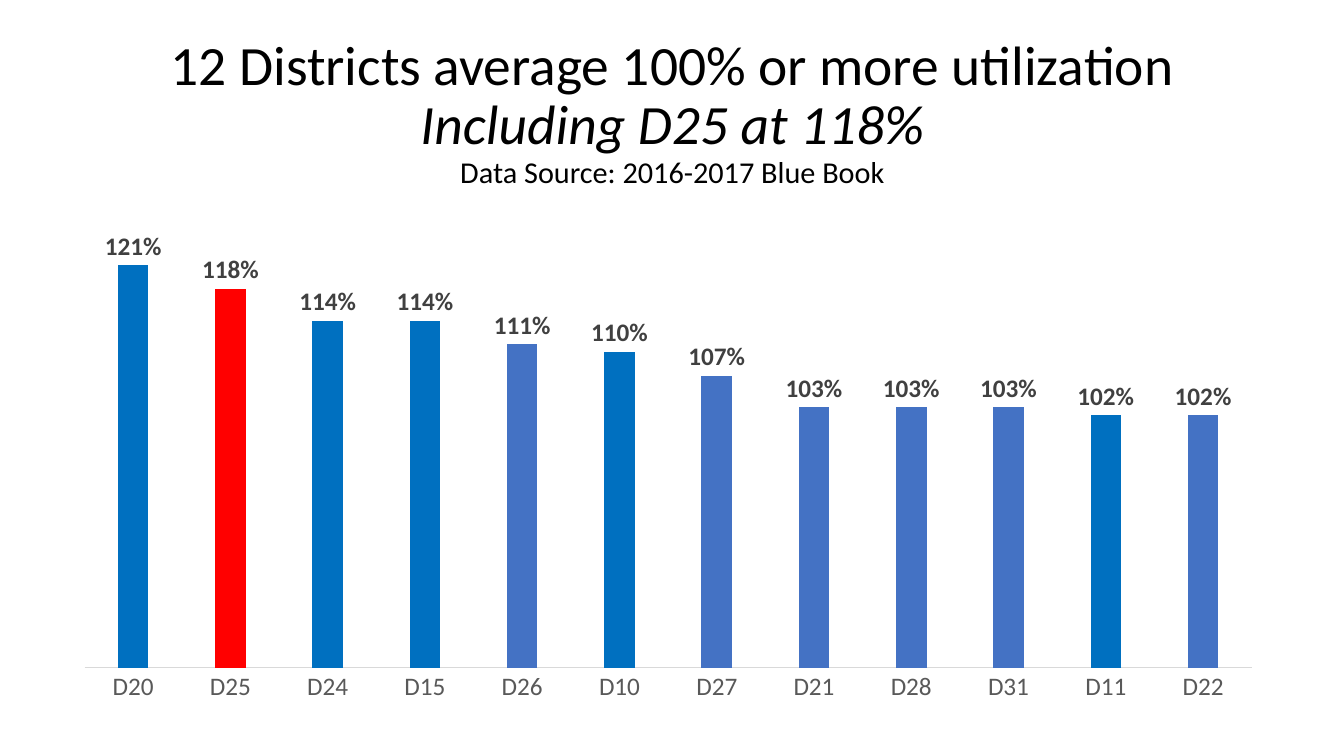
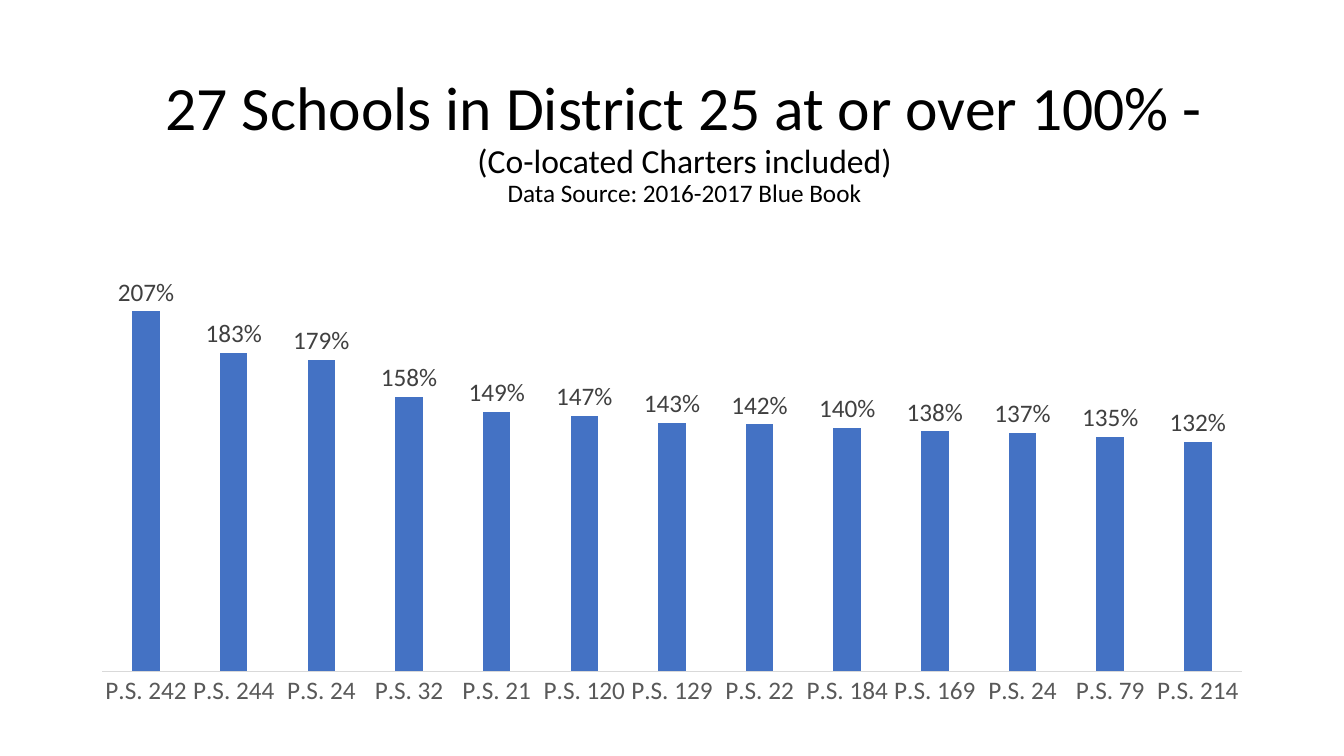
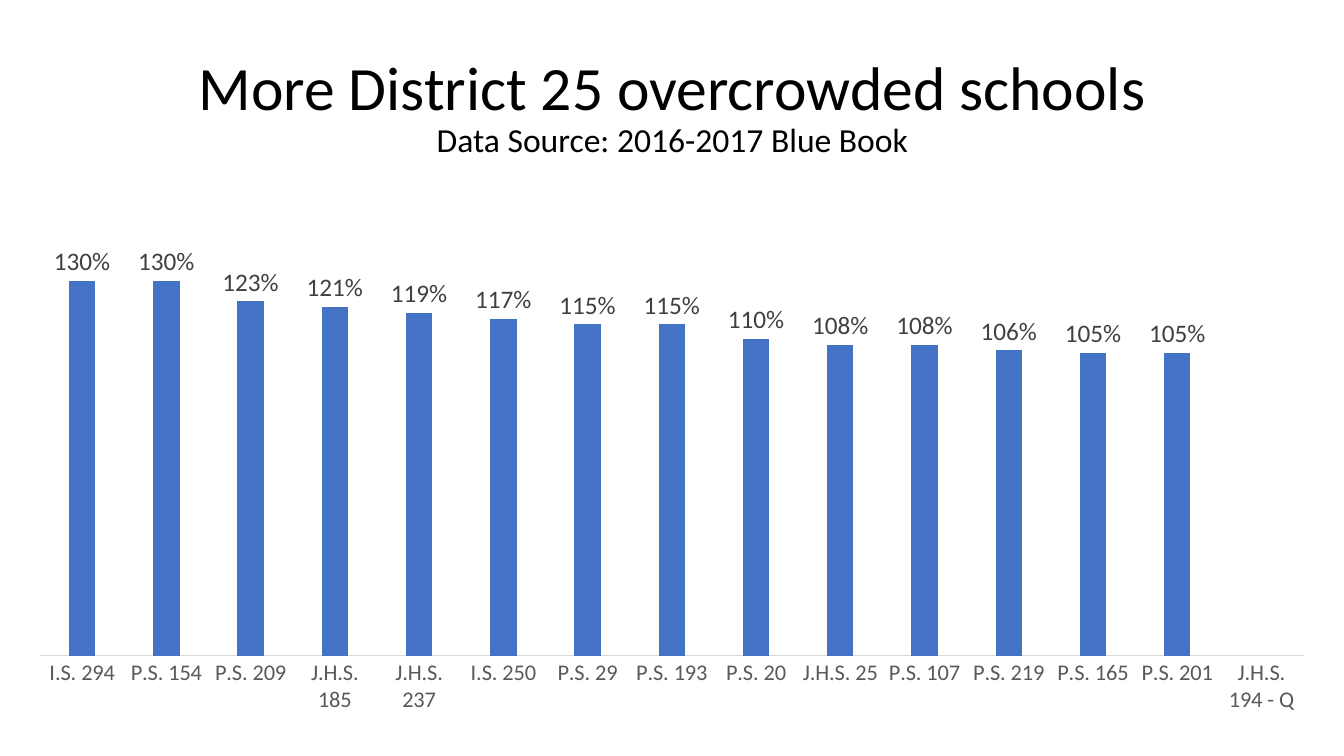
"""Build three slides on school utilization in District 25."""
from lxml.etree import SubElement
from pptx import Presentation
from pptx.chart.data import CategoryChartData
from pptx.dml.color import RGBColor
from pptx.enum.chart import XL_CHART_TYPE, XL_LABEL_POSITION, XL_TICK_MARK
from pptx.enum.text import MSO_ANCHOR, PP_ALIGN
from pptx.oxml import parse_xml
from pptx.oxml.ns import nsdecls, qn
from pptx.util import Inches, Pt

FONT = "Calibri"
BLACK = RGBColor(0x00, 0x00, 0x00)
BAR_BLUE = RGBColor(0x44, 0x72, 0xC4)
DEEP_BLUE = RGBColor(0x00, 0x70, 0xC0)
RED = RGBColor(0xFF, 0x00, 0x00)
LABEL_GRAY = RGBColor(0x40, 0x40, 0x40)
AXIS_GRAY = RGBColor(0x59, 0x59, 0x59)
LINE_GRAY = RGBColor(0xD9, 0xD9, 0xD9)
SOURCE = "Data Source: 2016-2017 Blue Book"

SLIDES = [
    {
        "title_box": (0.92, 0.4, 11.5, 1.45),
        "title": [
            ("12 Districts average 100% or more utilization", 39.6, False),
            ("Including D25 at 118%", 39.6, True),
            (SOURCE, 21.6, False),
        ],
        "chart_box": (0.53, 1.93, 11.89, 5.17),
        "plot": (0.026, 0, 0.974, 0.908),
        "scale": (0.7, 1.3),
        "axis_size": 18,
        "bold_labels": True,
        "points": {0: DEEP_BLUE, 1: RED, 2: DEEP_BLUE, 3: DEEP_BLUE, 5: DEEP_BLUE, 10: DEEP_BLUE},
        "bars": [
            ("D20", 1.21), ("D25", 1.18), ("D24", 1.14), ("D15", 1.14),
            ("D26", 1.11), ("D10", 1.10), ("D27", 1.07), ("D21", 1.03),
            ("D28", 1.03), ("D31", 1.03), ("D11", 1.02), ("D22", 1.02),
        ],
    },
    {
        "title_box": (1.04, 0.69, 11.5, 1.45),
        "title": [
            ("27 Schools in District 25 at or over 100% -", 44, False),
            ("(Co-located Charters included)", 24, False),
            (SOURCE, 18, False),
        ],
        "chart_box": (0.78, 2.25, 11.77, 4.85),
        "plot": None,
        "scale": (0, 2.5),
        "axis_size": 18,
        "bold_labels": False,
        "points": {},
        "bars": [
            ("P.S. 242", 2.07), ("P.S. 244", 1.83), ("P.S. 24", 1.79), ("P.S. 32", 1.58),
            ("P.S. 21", 1.49), ("P.S. 120", 1.47), ("P.S. 129", 1.43), ("P.S. 22", 1.42),
            ("P.S. 184", 1.40), ("P.S. 169", 1.38), ("P.S. 24", 1.37), ("P.S. 79", 1.35),
            ("P.S. 214", 1.32),
        ],
    },
    {
        "title_box": (0.92, 0.4, 11.5, 1.36),
        "title": [
            ("More District 25 overcrowded schools", 44, False),
            (SOURCE, 24, False),
        ],
        "chart_box": (0.23, 1.96, 12.88, 5.28),
        "plot": (0.013, 0.103, 0.973, 0.758),
        "scale": (0, 1.4),
        "axis_size": 16,
        "bold_labels": False,
        "points": {},
        "bars": [
            ("I.S. 294", 1.30), ("P.S. 154", 1.30), ("P.S. 209", 1.23), ("J.H.S. 185", 1.21),
            ("J.H.S. 237", 1.19), ("I.S. 250", 1.17), ("P.S. 29", 1.15), ("P.S. 193", 1.15),
            ("P.S. 20", 1.10), ("J.H.S. 25", 1.08), ("P.S. 107", 1.08), ("P.S. 219", 1.06),
            ("P.S. 165", 1.05), ("P.S. 201", 1.05), ("J.H.S. 194 - Q", None),
        ],
    },
]


def style_font(font, size, color, bold=False, italic=False):
    """Apply the shared typeface with the given size and colour."""
    font.name = FONT
    font.size = Pt(size)
    font.color.rgb = color
    font.bold = bold
    font.italic = italic


def place_plot(chart, box):
    """Fix the inner plot area as fractions of the chart."""
    plot_area = chart.element.find(".//" + qn("c:plotArea"))
    for old_layout in plot_area.findall(qn("c:layout")):
        plot_area.remove(old_layout)
    layout = parse_xml(f"<c:layout {nsdecls('c')}><c:manualLayout/></c:layout>")
    settings = [("layoutTarget", "inner"), ("xMode", "edge"), ("yMode", "edge")]
    settings += zip("xywh", box)
    for tag, value in settings:
        SubElement(layout[0], qn(f"c:{tag}")).set("val", str(value))
    plot_area.insert(0, layout)


presentation = Presentation()
presentation.slide_width = Inches(13.33)
presentation.slide_height = Inches(7.5)

for content in SLIDES:
    slide = presentation.slides.add_slide(presentation.slide_layouts[6])

    title = slide.shapes.add_textbox(*map(Inches, content["title_box"]))
    title.text_frame.word_wrap = True
    title.text_frame.vertical_anchor = MSO_ANCHOR.MIDDLE
    paragraph = title.text_frame.paragraphs[0]
    paragraph.alignment = PP_ALIGN.CENTER
    paragraph.line_spacing = 0.9
    for index, (text, size, italic) in enumerate(content["title"]):
        if index:
            paragraph.add_line_break()
        run = paragraph.add_run()
        run.text = text
        style_font(run.font, size, BLACK, italic=italic)

    chart_data = CategoryChartData(number_format="0%")
    chart_data.categories = [name for name, value in content["bars"]]
    chart_data.add_series("Series 1", [value for name, value in content["bars"]])
    chart = slide.shapes.add_chart(
        XL_CHART_TYPE.COLUMN_CLUSTERED, *map(Inches, content["chart_box"]), chart_data
    ).chart
    chart.has_title = False
    chart.has_legend = False
    style_font(chart.font, 10, BLACK)
    if content["plot"]:
        place_plot(chart, content["plot"])

    value_axis = chart.value_axis
    value_axis.minimum_scale, value_axis.maximum_scale = content["scale"]
    value_axis.has_major_gridlines = False
    value_axis.visible = False

    category_axis = chart.category_axis
    category_axis.major_tick_mark = XL_TICK_MARK.NONE
    category_axis.minor_tick_mark = XL_TICK_MARK.NONE
    category_axis.format.line.color.rgb = LINE_GRAY
    category_axis.format.line.width = Pt(0.75)
    style_font(category_axis.tick_labels.font, content["axis_size"], AXIS_GRAY)

    plot = chart.plots[0]
    plot.vary_by_categories = False
    plot.gap_width = 219
    plot.overlap = -27
    series = plot.series[0]
    series.invert_if_negative = False
    series.format.fill.solid()
    series.format.fill.fore_color.rgb = BAR_BLUE
    for index, color in content["points"].items():
        fill = series.points[index].format.fill
        fill.solid()
        fill.fore_color.rgb = color

    labels = series.data_labels
    labels.show_value = True
    labels.position = XL_LABEL_POSITION.OUTSIDE_END
    labels.number_format = "0%"
    labels.number_format_is_linked = False
    style_font(labels.font, 18, LABEL_GRAY, bold=content["bold_labels"])

presentation.save("out.pptx")
